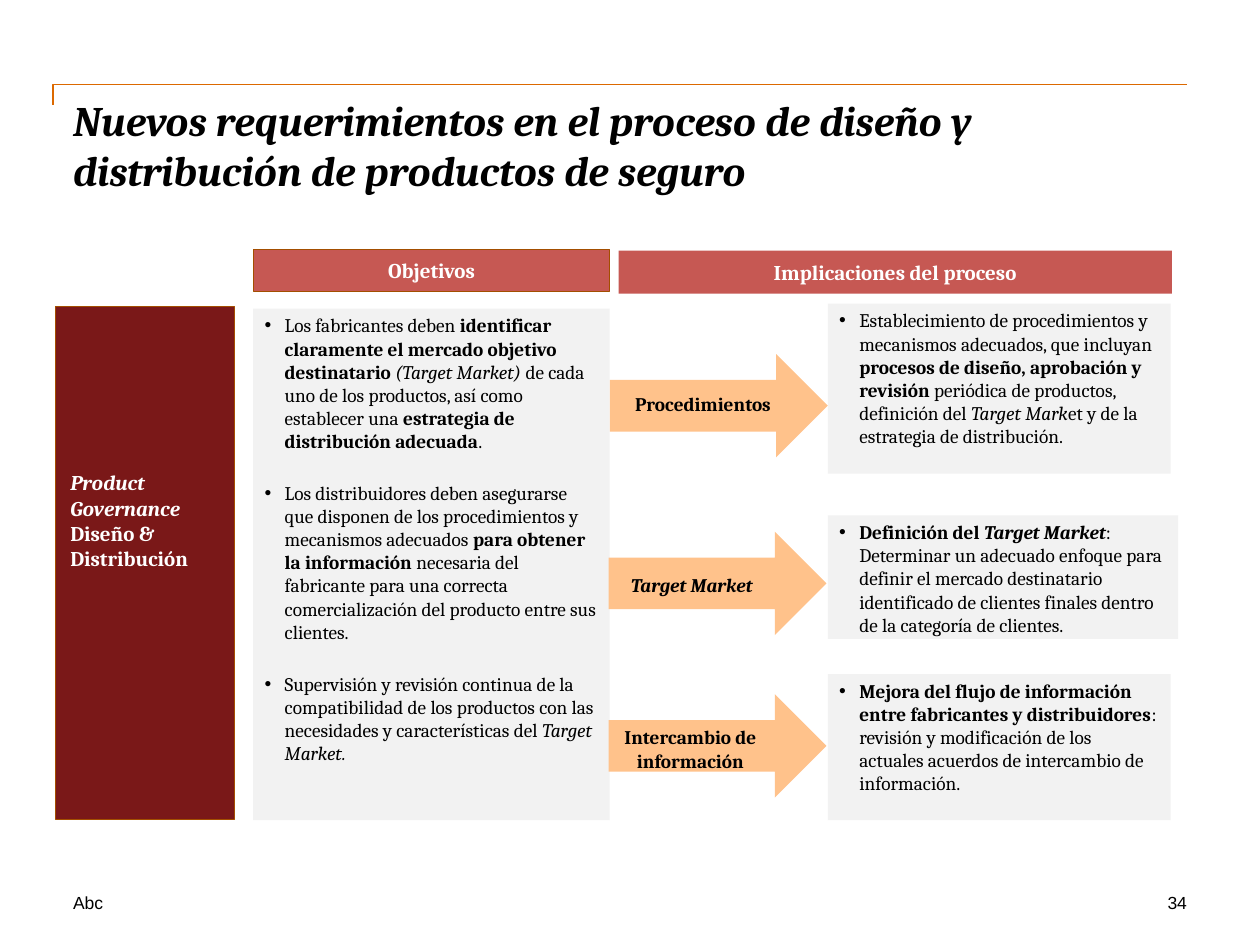
from pptx import Presentation
from pptx.dml.color import RGBColor
from pptx.enum import shapes, text
from pptx.oxml.ns import qn
from pptx.util import Inches, Pt
from lxml import etree

BLACK = RGBColor(0x00, 0x00, 0x00)
WHITE = RGBColor(0xFF, 0xFF, 0xFF)
GRAY = RGBColor(0xF2, 0xF2, 0xF2)
RED = RGBColor(0xC6, 0x58, 0x53)
DARK_RED = RGBColor(0x7A, 0x18, 0x18)
PEACH = RGBColor(0xFF, 0xC2, 0x8B)
ORANGE = RGBColor(0xDC, 0x69, 0x00)
BROWN = RGBColor(0xA3, 0x4E, 0x00)
LEFT, CENTER, RIGHT = text.PP_ALIGN.LEFT, text.PP_ALIGN.CENTER, text.PP_ALIGN.RIGHT

GOALS = [
    [("Los fabricantes deben ", ""),
     ("identificar claramente el mercado objetivo destinatario ", "b"),
     ("(Target Market) ", "i"),
     ("de cada uno de los productos, así como establecer una ", ""),
     ("estrategia de distribución adecuada", "b"), (".", "")],
    [("Los distribuidores deben asegurarse que disponen de los procedimientos "
      "y mecanismos adecuados ", ""),
     ("para obtener la información", "b"),
     (" necesaria del fabricante para una correcta comercialización del "
      "producto entre sus clientes.", "")],
    [("Supervisión y revisión continua de la compatibilidad de los productos "
      "con las necesidades y características del ", ""),
     ("Target Market.", "i")],
]
PROCEDURES = [
    [("Establecimiento de procedimientos y mecanismos adecuados, que incluyan ", ""),
     ("procesos de diseño, aprobación y revisión ", "b"),
     ("periódica de productos, definición del ", ""),
     ("Target Mark", "i"),
     ("et y de la estrategia de distribución.", "")],
]
TARGET_MARKET = [
    [("Definición del ", "b"), ("Target Market", "bi"),
     (": Determinar un adecuado enfoque para definir el mercado destinatario "
      "identificado de clientes finales dentro de la categoría de clientes.", "")],
]
INFORMATION = [
    [("Mejora del flujo de información entre fabricantes y distribuidores", "b"),
     (": revisión y modificación de los actuales acuerdos de intercambio de "
      "información.", "")],
]


def set_margins(tf, x, y):
    tf.margin_left = tf.margin_right = Inches(x)
    tf.margin_top = tf.margin_bottom = Inches(y)


def write(tf, paragraphs, size, color=BLACK, align=LEFT, font="Cambria"):
    tf.word_wrap = True
    for n, runs in enumerate(paragraphs):
        p = tf.add_paragraph() if n else tf.paragraphs[0]
        p.alignment = align
        for words, style in runs:
            r = p.add_run()
            r.text = words
            r.font.name = font
            r.font.size = Pt(size)
            r.font.color.rgb = color
            r.font.bold = "b" in style
            r.font.italic = "i" in style


def add_text(s, box, paragraphs, size, margins=(0, 0), **look):
    tf = s.shapes.add_textbox(*map(Inches, box)).text_frame
    set_margins(tf, *margins)
    write(tf, paragraphs, size, **look)


def add_block(s, box, fill, line=None, kind=shapes.MSO_SHAPE.RECTANGLE):
    sp = s.shapes.add_shape(kind, *map(Inches, box))
    sp.shadow.inherit = False
    sp.fill.solid()
    sp.fill.fore_color.rgb = fill
    if line is None:
        sp.line.fill.background()
    else:
        sp.line.color.rgb = line
        sp.line.width = Pt(0.25)
    return sp


def add_header(s, box, words, line=None):
    tf = add_block(s, box, RED, line).text_frame
    tf.vertical_anchor = text.MSO_ANCHOR.MIDDLE
    write(tf, [[(words, "b")]], 12, WHITE, CENTER)


def add_bullets(s, box, paragraphs):
    tf = add_block(s, box, GRAY).text_frame
    tf.vertical_anchor = text.MSO_ANCHOR.TOP
    set_margins(tf, 0.09, 0.04)
    write(tf, paragraphs, 11)
    for p in tf.paragraphs:
        p.space_after = Pt(16.5)
        pPr = p._p.get_or_add_pPr()
        pPr.set("marL", str(Inches(0.16)))
        pPr.set("indent", str(-Inches(0.16)))
        etree.SubElement(pPr, qn("a:buFont")).set("typeface", "Arial")
        etree.SubElement(pPr, qn("a:buChar")).set("char", "•")


def add_arrow(s, left, top, label_box, label, style="b"):
    add_block(s, (left, top, 1.73, 0.82), PEACH, kind=shapes.MSO_SHAPE.RIGHT_ARROW)
    add_text(s, (*label_box, 1.34, 0.26), [[(label, style)]], 11, align=CENTER)


def add_title_rule(s):
    builder = s.shapes.build_freeform(Inches(0.42), Inches(0.83))
    builder.add_line_segments(
        [(Inches(0.42), Inches(0.67)), (Inches(9.42), Inches(0.67))], close=False)
    sp = builder.convert_to_shape()
    sp.shadow.inherit = False
    sp.fill.background()
    sp.line.color.rgb = ORANGE
    sp.line.width = Pt(1)


def main():
    prs = Presentation()
    prs.slide_width, prs.slide_height = Inches(10), Inches(7.5)
    s = prs.slides.add_slide(prs.slide_layouts[6])

    add_title_rule(s)
    add_text(s, (0.58, 0.75, 9, 1),
             [[("Nuevos requerimientos en el proceso de diseño y distribución "
                "de productos de seguro", "bi")]], 24)

    add_bullets(s, (2.01, 2.45, 2.83, 4.06), GOALS)
    add_bullets(s, (6.57, 2.41, 2.72, 1.35), PROCEDURES)
    add_bullets(s, (6.57, 4.09, 2.78, 0.98), TARGET_MARKET)
    add_bullets(s, (6.57, 5.35, 2.72, 1.16), INFORMATION)

    add_header(s, (2.01, 1.98, 2.83, 0.33), "Objetivos", BROWN)
    add_header(s, (4.91, 1.99, 4.39, 0.34), "Implicaciones del proceso")

    add_arrow(s, 4.84, 2.81, (4.91, 3.11), "Procedimientos")
    add_arrow(s, 4.83, 4.22, (4.82, 4.55), "Target Market", "bi")
    add_arrow(s, 4.83, 5.51, (4.81, 5.76), "Intercambio de información")

    add_block(s, (0.44, 2.43, 1.42, 4.07), DARK_RED, BROWN)
    add_text(s, (0.46, 3.68, 1.36, 0.91),
             [[("Product Governance", "bi")], [("Diseño & Distribución", "b")]],
             12, margins=(0.1, 0.05), color=WHITE)

    add_text(s, (0.58, 7.08, 2.83, 0.17), [[("Abc", "")]], 10, font="Arial")
    add_text(s, (7.75, 7.08, 1.67, 0.17), [[("34", "")]], 10, align=RIGHT, font="Arial")

    prs.save("out.pptx")


if __name__ == "__main__":
    main()
